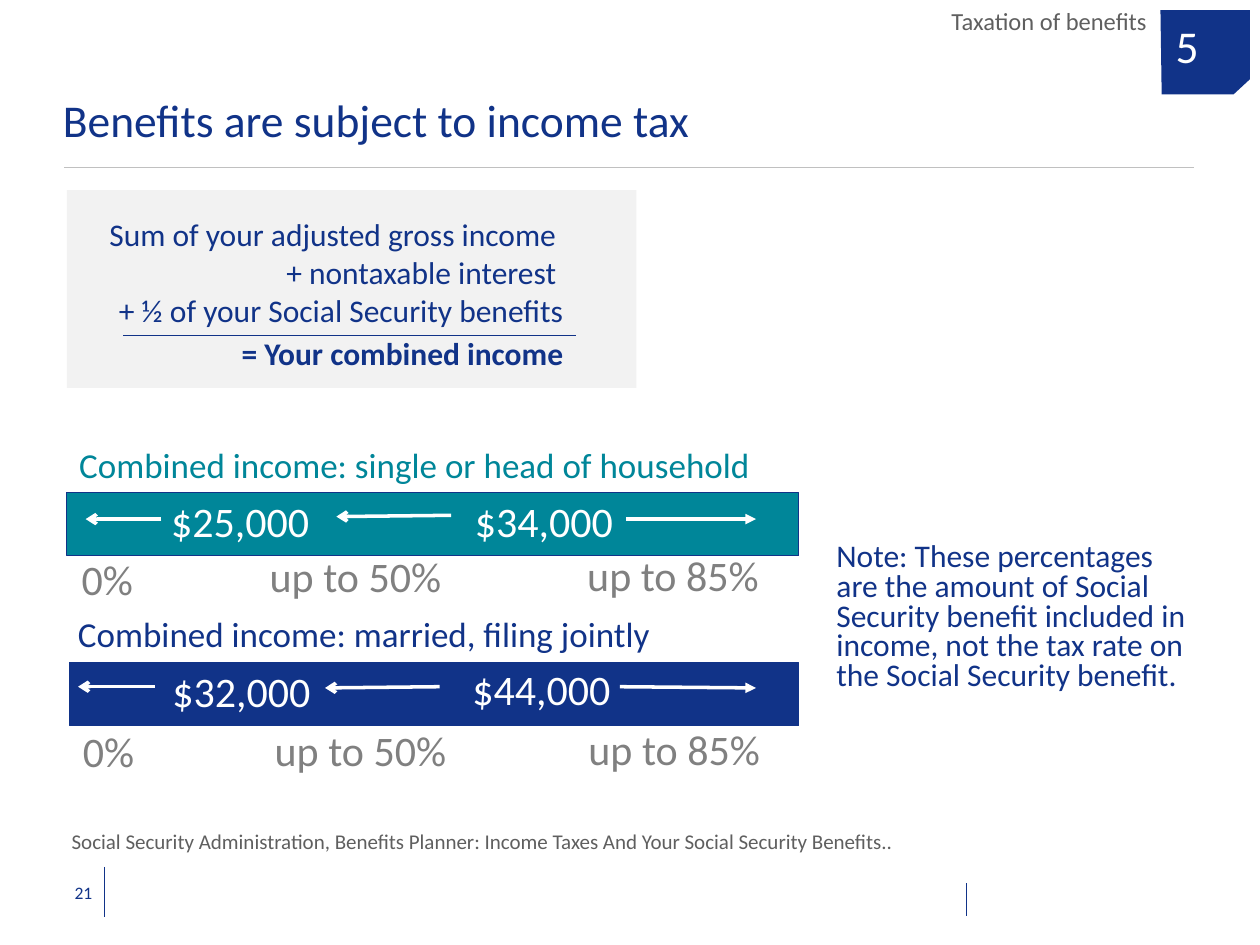
"""Build the slide on how Social Security benefits are taxed."""
from dataclasses import dataclass

from lxml.etree import SubElement
from pptx import Presentation
from pptx.dml.color import RGBColor as Color
from pptx.enum.shapes import MSO_CONNECTOR as Connector, MSO_SHAPE as Shape
from pptx.enum.text import MSO_ANCHOR as Anchor, PP_ALIGN as Align
from pptx.oxml.ns import qn
from pptx.util import Inches, Pt


@dataclass(frozen=True)
class Theme:
    font: str = "Calibri"
    navy: str = "113388"
    teal: str = "008699"
    white: str = "FFFFFF"
    panel: str = "F2F2F2"
    rule: str = "C0C0C0"
    muted: str = "5F5F5F"
    percent: str = "808080"
    title: int = 26
    amount: int = 24
    heading: int = 20
    body: int = 18
    section: int = 14
    source: int = 12
    page: int = 10


theme = Theme()
presentation = Presentation()
presentation.slide_width, presentation.slide_height = Inches(10), Inches(7.5)
COLUMN = presentation.slide_width / 100
ROW = presentation.slide_height / 75
slide = presentation.slides.add_slide(presentation.slide_layouts[6])
shapes = slide.shapes


def add_text(area, paragraphs, size, color, align=Align.LEFT, spacing=None,
             anchor=Anchor.TOP, insets=(1, 0.5), wrap=True):
    left, top, width, height = area
    box = shapes.add_textbox(round(left * COLUMN), round(top * ROW),
                             round(width * COLUMN), round(height * ROW))
    frame = box.text_frame
    frame.word_wrap, frame.vertical_anchor = wrap, anchor
    frame.margin_left = frame.margin_right = round(insets[0] * COLUMN)
    frame.margin_top = frame.margin_bottom = round(insets[1] * ROW)
    for index, lines in enumerate(paragraphs):
        paragraph = frame.add_paragraph() if index else frame.paragraphs[0]
        paragraph.alignment, paragraph.line_spacing = align, spacing
        if index:
            paragraph.space_before = Pt(3)
        for number, line in enumerate(lines):
            if number:
                paragraph.add_line_break()
            run = paragraph.add_run()
            run.text = line
            run.font.name, run.font.size = theme.font, Pt(size)
            run.font.color.rgb = Color.from_string(color)
            run.font.bold = index > 0
        paragraph.font.size = Pt(size)


def add_line(start, end, color, width, arrowhead=None):
    line = shapes.add_connector(
        Connector.STRAIGHT, round(start[0] * COLUMN), round(start[1] * ROW),
        round(end[0] * COLUMN), round(end[1] * ROW))
    line.line.color.rgb = Color.from_string(color)
    line.line.width = Pt(width)
    if arrowhead:
        SubElement(line.line._get_or_add_ln(), qn("a:tailEnd"), type=arrowhead)
    SubElement(line._element.spPr, qn("a:effectLst"))


add_line((8.3, 68.8), (8.3, 72.8), theme.navy, 0.75)
add_line((5.1, 13.3), (94.8, 13.3), theme.rule, 0.75)
add_line((76.7, 70.1), (76.7, 72.7), theme.navy, 0.75)

bars = [
    ((5.3, 15.1, 45.2, 15.7), theme.panel, None),
    ((5.3, 39.1, 58.1, 5), theme.teal, theme.navy),
    ((5.5, 52.6, 57.9, 5), theme.navy, theme.navy),
]
for (left, top, width, height), fill, outline in bars:
    bar = shapes.add_shape(Shape.RECTANGLE, round(left * COLUMN), round(top * ROW),
                           round(width * COLUMN), round(height * ROW))
    bar.shadow.inherit = False
    bar.fill.solid()
    bar.fill.fore_color.rgb = Color.from_string(fill)
    if outline:
        bar.line.color.rgb = Color.from_string(outline)
        bar.line.width = Pt(0.5)
    else:
        bar.line.fill.background()

corners = [(92.2, 7.5), (97.9, 7.5), (99.2, 6.3), (99.2, 0.8), (92.1, 0.8)]
corners = [(round(x * COLUMN), round(y * ROW)) for x, y in corners]
builder = shapes.build_freeform(*corners[0])
builder.add_line_segments(corners[1:], close=True)
badge = builder.convert_to_shape()
badge.shadow.inherit = False
badge.fill.solid()
badge.fill.fore_color.rgb = Color.from_string(theme.navy)
badge.line.fill.background()

add_text((0.8, 68.8, 7.5, 4), [["21"]], theme.page, theme.navy, Align.RIGHT,
         anchor=Anchor.MIDDLE)
add_text((5, 2.9, 84.3, 8.8), [["Benefits are subject to income tax"]],
         theme.title, theme.navy, spacing=0.9, anchor=Anchor.BOTTOM, insets=(0, 0))
add_text((48.5, 0.5, 43.5, 2.4), [["Taxation of benefits"]], theme.section,
         theme.muted, Align.RIGHT, insets=(1, 0))
add_text((93.3, 1.9, 5.6, 5.2), [["5"]], theme.title, theme.white, spacing=0.9,
         insets=(0, 0))
add_text((65.4, 42.7, 30.7, 12.9),
         [["Note: These percentages are the amount of Social Security benefit "
           "included in income, not the tax rate on the Social Security benefit."]],
         theme.body, theme.navy, spacing=Pt(17))
add_text((5.2, 16.6, 40.5, 13.6),
         [["Sum of your adjusted gross income ", "+ nontaxable interest ",
           "+ ½ of your Social Security benefits"],
          ["= Your combined income"]],
         theme.body, theme.navy, Align.RIGHT)
add_line((9.8, 26.6), (45.7, 26.6), theme.navy, 0.5)

headings = [
    ((5.3, 35.1, 66, 4), "Combined income: single or head of household", theme.teal),
    ((5.2, 48.5, 58.1, 4), "Combined income: married, filing jointly", theme.navy),
]
for area, heading, color in headings:
    add_text(area, [[heading]], theme.heading, color, spacing=0.9)

amounts = [
    (12.6, 38.8, "$25,000"), (36.7, 38.8, "$34,000"),
    (12.7, 52.3, "$32,000"), (36.5, 52.2, "$44,000"),
]
for left, top, amount in amounts:
    add_text((left, top, 13.1, 5), [[amount]], theme.amount, theme.white, wrap=False)

shares = [
    (5.5, 43.4, 12.1, "0%", Align.LEFT),
    (16.5, 43.2, 19.5, "up to 50%", Align.RIGHT),
    (43, 43.1, 18.2, "up to 85%", Align.RIGHT),
    (5.6, 57.1, 12.1, "0%", Align.LEFT),
    (17.6, 57, 18.8, "up to 50%", Align.RIGHT),
    (42.8, 56.9, 18.5, "up to 85%", Align.RIGHT),
]
for left, top, width, share, align in shares:
    add_text((left, top, width, 5.1), [[share]], theme.amount, theme.percent, align)

arrows = [
    ((12.8, 41.2), (6.8, 41.2), "arrow"),
    ((35.8, 40.9), (26.7, 41), "arrow"),
    ((49.7, 41.2), (60, 41.2), "triangle"),
    ((12.3, 54.5), (6.2, 54.5), "arrow"),
    ((34.9, 54.5), (25.8, 54.6), "arrow"),
    ((49.2, 54.5), (60, 54.6), "triangle"),
]
for start, end, arrowhead in arrows:
    add_line(start, end, theme.white, 2, arrowhead)

add_text((4.7, 65.3, 79.6, 3.1),
         [["Social Security Administration, Benefits Planner: "
           "Income Taxes And Your Social Security Benefits.."]],
         theme.source, theme.muted)

presentation.save("out.pptx")
